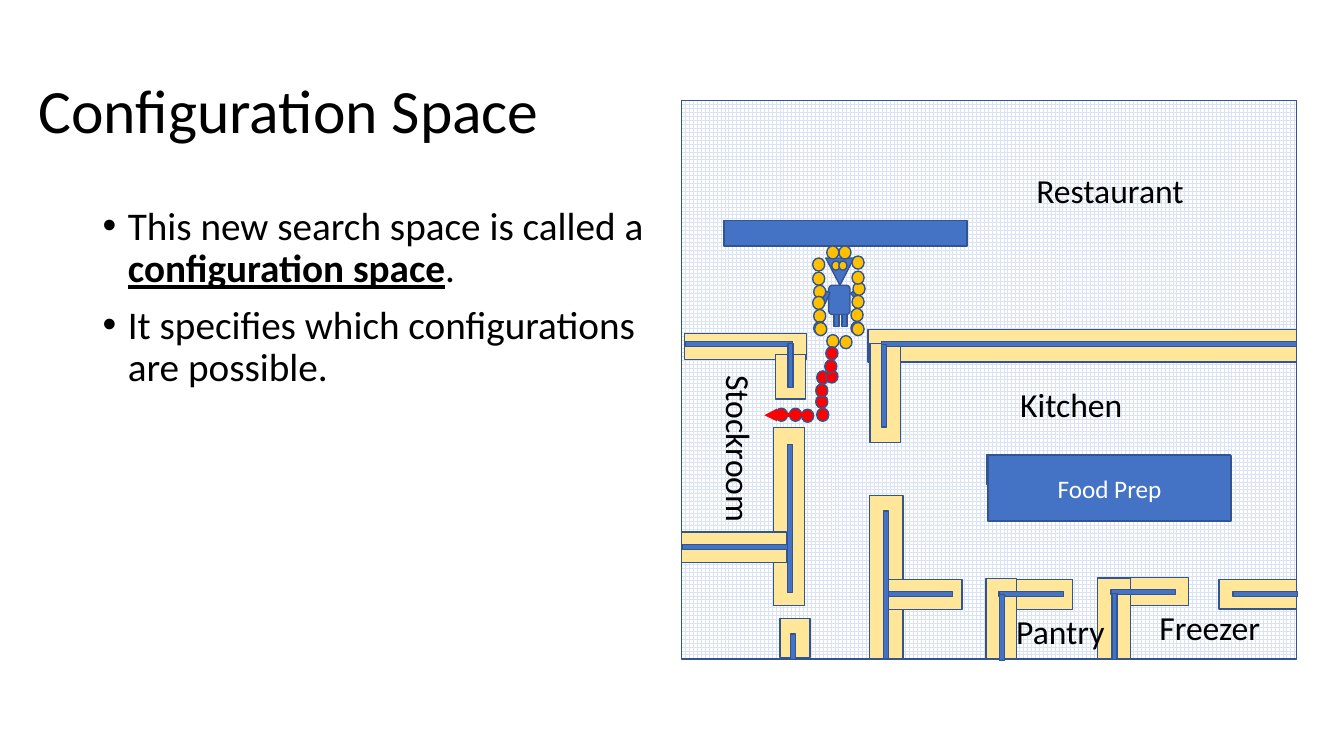
from lxml.etree import SubElement
from pptx import Presentation
from pptx.dml.color import RGBColor
from pptx.enum.dml import MSO_PATTERN
from pptx.enum.shapes import MSO_CONNECTOR, MSO_SHAPE
from pptx.enum.text import MSO_ANCHOR, MSO_AUTO_SIZE, PP_ALIGN
from pptx.oxml.ns import qn
from pptx.util import Inches, Pt

BLACK = RGBColor(0x00, 0x00, 0x00)
WHITE = RGBColor(0xFF, 0xFF, 0xFF)
BLUE = RGBColor(0x44, 0x72, 0xC4)
OUTLINE = RGBColor(0x32, 0x54, 0x91)
GRID = RGBColor(0xDA, 0xE3, 0xF3)
SAND = RGBColor(0xFF, 0xE6, 0x99)
GOLD = RGBColor(0xFF, 0xC0, 0x00)
RED = RGBColor(0xFF, 0x00, 0x00)

# Each bar: left, top, width, height, rotation
CLEARANCES = [
    (6.79, 3.31, 1.21, 0.26, 0), (8.61, 3.27, 4.25, 0.32, 0),
    (8.29, 3.75, 0.98, 0.3, 90), (7.98, 5.56, 1.62, 0.33, 90),
    (8.8, 5.75, 0.74, 0.3, 0), (9.9, 5.75, 0.74, 0.3, 0),
    (11.02, 5.73, 0.77, 0.28, 0), (9.53, 5.99, 0.8, 0.3, 90),
    (10.65, 5.97, 0.8, 0.33, 90), (12.09, 5.75, 0.77, 0.29, 0),
    (9.79, 4.51, 2.41, 0.3, 0), (6.94, 4.97, 1.77, 0.31, 90),
    (6.76, 5.28, 1.04, 0.3, 0), (7.62, 3.59, 0.44, 0.3, 90),
    (7.69, 6.18, 0.39, 0.3, 90),
]
# Each wall: left, top, length, rotation
WALL_THICKNESS = 0.05
WALLS = [
    (6.8, 3.39, 1.06, 0), (8.74, 3.39, 4.12, 0), (8.36, 3.8, 0.82, 90),
    (8.05, 5.78, 1.47, 90), (8.81, 5.87, 0.64, 0), (9.91, 5.87, 0.64, 0),
    (11.02, 5.85, 0.64, 0), (9.61, 6.2, 0.65, 90), (10.73, 6.19, 0.65, 90),
    (12.23, 5.87, 0.64, 0), (7.1, 5.12, 1.47, 90), (6.77, 5.4, 1.04, 0),
    (7.62, 3.6, 0.44, 90), (7.74, 6.39, 0.25, 90),
]
ROBOT = [
    (MSO_SHAPE.ISOSCELES_TRIANGLE, (8.19, 2.56, 0.28, 0.27), BLUE, 180),
    (MSO_SHAPE.OVAL, (8.25, 2.59, 0.08, 0.09), GOLD, 0),
    (MSO_SHAPE.OVAL, (8.32, 2.59, 0.08, 0.09), GOLD, 0),
    (MSO_SHAPE.ROUNDED_RECTANGLE, (8.22, 2.83, 0.21, 0.29), BLUE, 0),
    (MSO_SHAPE.RECTANGLE, (8.27, 3.12, 0.05, 0.12), BLUE, 0),
    (MSO_SHAPE.RECTANGLE, (8.35, 3.12, 0.05, 0.12), BLUE, 0),
    (MSO_SHAPE.RECTANGLE, (8.47, 2.88, 0.05, 0.12), BLUE, 319.4),
    (MSO_SHAPE.RECTANGLE, (8.16, 2.89, 0.05, 0.12), BLUE, 24.9),
]
DOT_SIZE = (0.12, 0.13)
ROBOT_OUTLINE = [
    (8.06, 2.56), (8.06, 2.7), (8.07, 2.83), (8.06, 2.94), (8.07, 3.07),
    (8.07, 3.19), (8.44, 3.19), (8.44, 3.06), (8.45, 2.93), (8.46, 2.8),
    (8.45, 2.69), (8.45, 2.54), (8.32, 2.44), (8.2, 2.44),
]
ROBOT_BASE = [(8.08, 3.2), (8.2, 3.32), (8.33, 3.33), (8.45, 3.2)]
ROUTE = [
    (7.69, 4.05), (7.83, 4.05), (7.95, 4.06), (8.1, 4.05), (8.09, 3.92),
    (8.09, 3.81), (8.1, 3.68), (8.19, 3.67), (8.18, 3.57), (8.19, 3.44),
]
ROOMS = [
    ("Kitchen", (10.02, 3.76, 1.23, 0.5), 0),
    ("Freezer", (11.4, 5.97, 1.21, 0.5), 0),
    ("Pantry", (9.98, 6.01, 1.09, 0.5), 0),
    ("Stockroom", (6.5, 4.21, 1.67, 0.5), 90),
]
# Each bullet: runs of text and whether the run is stressed
BULLETS = [
    [("This new search space is called a ", False),
     ("configuration space", True), (".", False)],
    [("It specifies which configurations are possible.", False)],
]


class FloorPlanSlide:
    font = "Calibri"

    def __init__(self, prs):
        self.s = prs.slides.add_slide(prs.slide_layouts[5])

    def styled_run(self, p, text, size, color=BLACK, **extra):
        r = p.add_run()
        r.text = text
        for name, value in {"name": self.font, "size": Pt(size), **extra}.items():
            setattr(r.font, name, value)
        r.font.color.rgb = color

    def title(self, text, box):
        sp = self.s.shapes.title
        for name, value in zip(("left", "top", "width", "height"), box):
            setattr(sp, name, Inches(value))
        tf = sp.text_frame
        tf.vertical_anchor = MSO_ANCHOR.MIDDLE
        p = tf.paragraphs[0]
        p.alignment = PP_ALIGN.LEFT
        p.line_spacing = 0.9
        self.styled_run(p, text, 44)

    def bullets(self, items, box):
        tf = self.s.shapes.add_textbox(*map(Inches, box)).text_frame
        tf.word_wrap = True
        for i, runs in enumerate(items):
            p = tf.add_paragraph() if i else tf.paragraphs[0]
            p.line_spacing = 0.9
            p.space_before = Pt(10)
            pPr = p._p.get_or_add_pPr()
            pPr.set("marL", str(Inches(0.25)))
            pPr.set("indent", str(Inches(-0.25)))
            SubElement(pPr, qn("a:buFont"), typeface="Arial")
            SubElement(pPr, qn("a:buChar"), char="•")
            for text, stressed in runs:
                self.styled_run(p, text, 28, bold=stressed, underline=stressed)

    def label(self, text, box, rotation=0):
        sp = self.s.shapes.add_textbox(*map(Inches, box))
        sp.rotation = rotation
        tf = sp.text_frame
        tf.word_wrap = False
        tf.auto_size = MSO_AUTO_SIZE.SHAPE_TO_FIT_TEXT
        self.styled_run(tf.paragraphs[0], text, 24)

    def shape(self, kind, box, color, rotation=0, group=None):
        shapes = (group or self.s).shapes
        sp = shapes.add_shape(kind, *map(Inches, box))
        sp.rotation = rotation
        sp.shadow.inherit = False
        sp.fill.solid()
        sp.fill.fore_color.rgb = color
        sp.line.color.rgb = OUTLINE
        sp.line.width = Pt(1)
        return sp

    def bar(self, box, color, rotation=0):
        return self.shape(MSO_SHAPE.RECTANGLE, box, color, rotation)

    def floor(self, box):
        fill = self.bar(box, WHITE).fill
        fill.patterned()
        fill.pattern = MSO_PATTERN.LARGE_GRID
        fill.fore_color.rgb = GRID
        fill.back_color.rgb = WHITE

    def robot(self, parts):
        group = self.s.shapes.add_group_shape()
        for kind, box, color, rotation in parts:
            self.shape(kind, box, color, rotation, group)

    def dots(self, places, color):
        for place in places:
            self.shape(MSO_SHAPE.OVAL, place + DOT_SIZE, color)

    def counter(self, text, box):
        tf = self.bar(box, BLUE).text_frame
        tf.vertical_anchor = MSO_ANCHOR.MIDDLE
        p = tf.paragraphs[0]
        p.alignment = PP_ALIGN.CENTER
        self.styled_run(p, text, 18, WHITE)

    def arrow(self, ends, color):
        line = self.s.shapes.add_connector(MSO_CONNECTOR.STRAIGHT, *map(Inches, ends))
        line.line.color.rgb = color
        line.line.width = Pt(3)
        spPr = line._element.spPr
        SubElement(spPr.find(qn("a:ln")), qn("a:tailEnd"), type="triangle")
        SubElement(spPr, qn("a:effectLst"))


def main():
    prs = Presentation()
    prs.slide_width = Inches(13.33)
    prs.slide_height = Inches(7.5)
    plan = FloorPlanSlide(prs)
    plan.floor((6.76, 1, 6.1, 5.54))
    plan.robot(ROBOT)
    plan.bar((7.18, 2.19, 2.41, 0.25), BLUE)
    for *box, rotation in CLEARANCES:
        plan.bar(box, SAND, rotation)
    plan.label("Restaurant", (10.18, 1.64, 1.68, 0.5))
    plan.dots(ROBOT_OUTLINE, GOLD)
    plan.title("Configuration Space", (0.28, 0.4, 6.3, 1.45))
    plan.bullets(BULLETS, (0.92, 2, 5.67, 4.76))
    for left, top, length, rotation in WALLS:
        plan.bar((left, top, length, WALL_THICKNESS), BLUE, rotation)
    plan.counter("Food Prep", (9.8, 4.52, 2.41, 0.65))
    for room in ROOMS:
        plan.label(*room)
    plan.dots(ROBOT_BASE, GOLD)
    plan.dots(ROUTE, RED)
    plan.arrow((8.05, 4.11, 7.58, 4.12), RED)
    prs.save("out.pptx")


if __name__ == "__main__":
    main()
